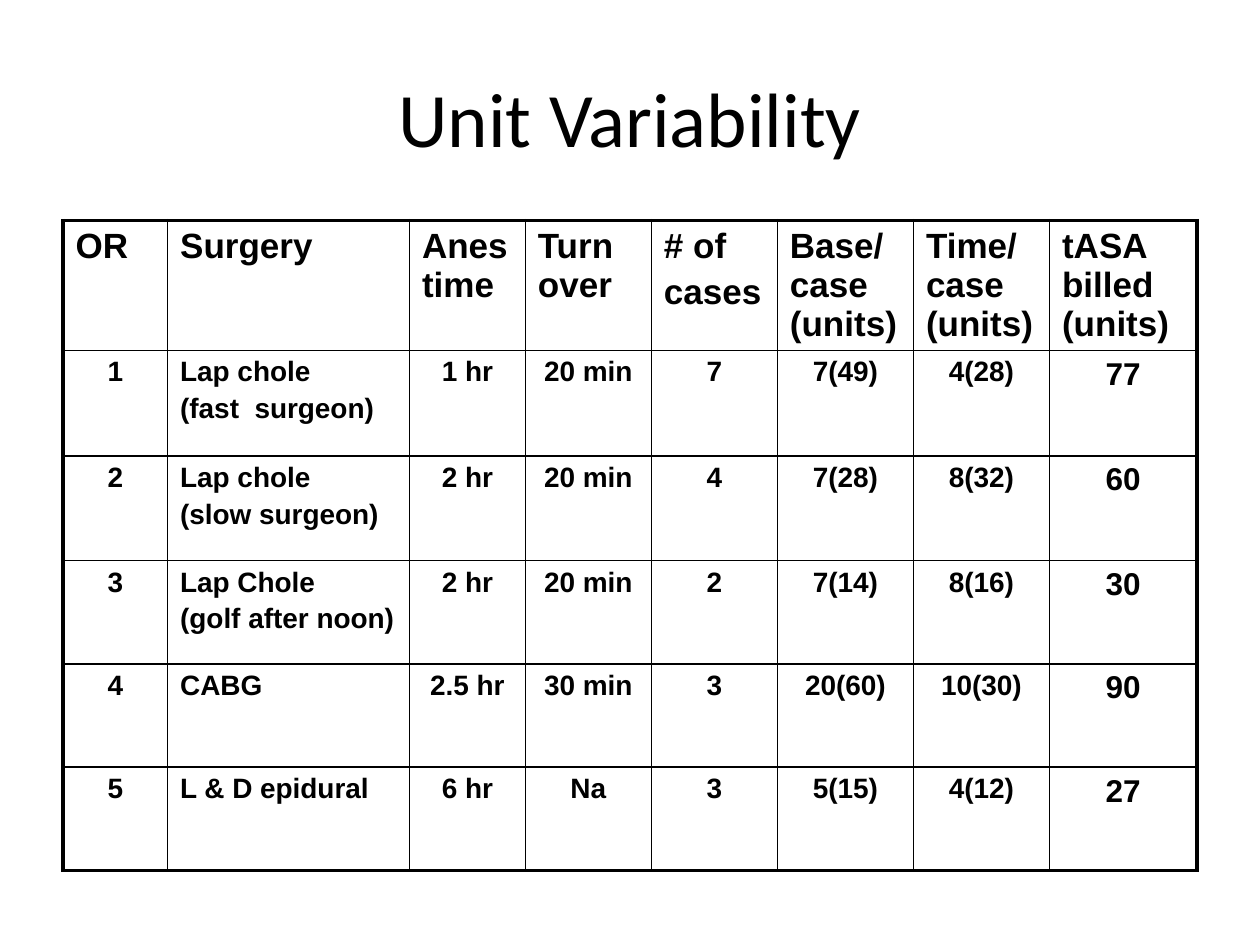
from lxml.etree import SubElement
from pptx import Presentation
from pptx.dml.color import RGBColor
from pptx.enum.text import MSO_ANCHOR, PP_ALIGN
from pptx.oxml.ns import qn
from pptx.util import Inches, Pt

# Content
TITLE = "Unit Variability"
ROWS = [
    ("OR", "Surgery", "Anes time", "Turn over", "# of\ncases",
     "Base/case (units)", "Time/ case (units)", "tASA billed (units)"),
    ("1", "Lap chole\n(fast  surgeon)", "1 hr", "20 min", "7", "7(49)", "4(28)", "77"),
    ("2", "Lap chole\n(slow surgeon)", "2 hr", "20 min", "4", "7(28)", "8(32)", "60"),
    ("3", "Lap Chole\n(golf after noon)", "2 hr", "20 min", "2", "7(14)", "8(16)", "30"),
    ("4", "CABG", "2.5 hr", "30 min", "3", "20(60)", "10(30)", "90"),
    ("5", "L & D epidural", "6 hr", "Na", "3", "5(15)", "4(12)", "27"),
]

# Layout and style
COLUMN_WIDTHS = [0.83, 1.92, 0.92, 1, 1, 1.08, 1.08, 1.17]
ROW_HEIGHTS = [0.82, 0.84, 0.83, 0.82, 0.82, 0.82]
BLACK = RGBColor(0, 0, 0)
INNER_LINE, OUTER_LINE = Pt(1), Pt(2.25)
LAST_ROW, LAST_COLUMN = len(ROWS) - 1, len(COLUMN_WIDTHS) - 1


def set_borders(cell, row, column):
    """Draw thin inner lines and a thick line round the table."""
    properties = cell._tc.get_or_add_tcPr()
    outer_edges = {"a:lnL": column == 0, "a:lnR": column == LAST_COLUMN,
                   "a:lnT": row == 0, "a:lnB": row == LAST_ROW}
    for tag, is_outer in outer_edges.items():
        width = OUTER_LINE if is_outer else INNER_LINE
        line = SubElement(properties, qn(tag), w=str(int(width)))
        fill = SubElement(line, qn("a:solidFill"))
        SubElement(fill, qn("a:srgbClr"), val=str(BLACK))


def set_space_before(paragraph, percent):
    spacing = SubElement(paragraph._p.get_or_add_pPr(), qn("a:spcBef"))
    SubElement(spacing, qn("a:spcPct"), val=str(percent * 1000))


def fill_cell(cell, text, row, column):
    is_header = row == 0
    size = 20 if is_header else 18 if column == LAST_COLUMN else 16
    cell.text = text
    for paragraph in cell.text_frame.paragraphs:
        set_space_before(paragraph, 20)
        paragraph.alignment = PP_ALIGN.LEFT if is_header or column == 1 else PP_ALIGN.CENTER
        paragraph.font.name = "Arial"
        paragraph.font.size = Pt(size)
        paragraph.font.bold = True
        paragraph.font.color.rgb = BLACK
    set_borders(cell, row, column)
    cell.fill.background()


presentation = Presentation()
presentation.slide_width, presentation.slide_height = Inches(10), Inches(7.5)
slide = presentation.slides.add_slide(presentation.slide_layouts[5])

# Title
title = slide.shapes.title
title.left, title.top = Inches(0.5), Inches(0.3)
title.width, title.height = Inches(9), Inches(1.25)
title.text_frame.text = TITLE
title.text_frame.vertical_anchor = MSO_ANCHOR.MIDDLE
heading = title.text_frame.paragraphs[0]
heading.alignment = PP_ALIGN.CENTER
heading.font.name = "Calibri"
heading.font.size = Pt(44)
heading.font.color.rgb = BLACK

# Table
table = slide.shapes.add_table(len(ROWS), len(COLUMN_WIDTHS), Inches(0.5), Inches(1.75),
                               Inches(9), Inches(5.24)).table
table.first_row = table.horz_banding = False
for column, width in zip(table.columns, COLUMN_WIDTHS):
    column.width = Inches(width)
for row, height in zip(table.rows, ROW_HEIGHTS):
    row.height = Inches(height)
for row, texts in enumerate(ROWS):
    for column, text in enumerate(texts):
        fill_cell(table.cell(row, column), text, row, column)

presentation.save("out.pptx")
